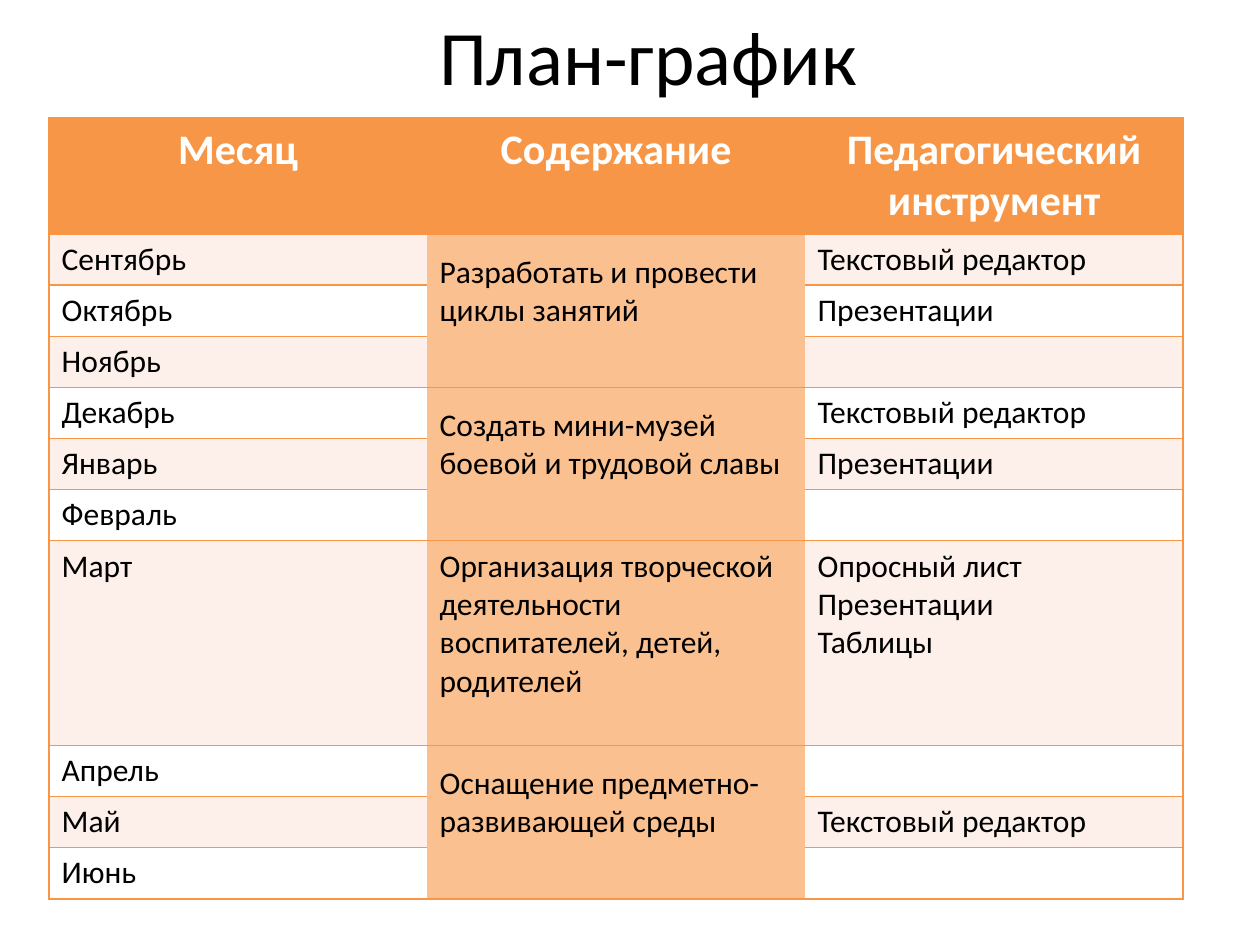
import lxml.etree
import pptx
import pptx.dml.color
import pptx.enum.text
import pptx.oxml.ns
import pptx.util

Cm = pptx.util.Cm
ALIGN = pptx.enum.text.PP_ALIGN
ANCHOR = pptx.enum.text.MSO_ANCHOR
ORANGE, PEACH, PALE, WHITE, BLACK = "F79646", "FAC090", "FDEFE9", "FFFFFF", "000000"
NO_STYLE = "{2D5ABB26-0587-4C30-8999-92F81FD0307C}"
HEADER = {"name": "Calibri", "size": pptx.util.Pt(24), "bold": True}
BODY = {"name": "Calibri", "size": pptx.util.Pt(18), "bold": False}
TITLE = {"name": "Calibri", "size": pptx.util.Pt(44)}
HEADINGS = ("Месяц", "Содержание", "Педагогический инструмент")
PLAN = [
    ("Разработать и провести циклы занятий",
     [("Сентябрь", "Текстовый редактор"), ("Октябрь", "Презентации"), ("Ноябрь", "")]),
    ("Создать мини-музей боевой и трудовой славы",
     [("Декабрь", "Текстовый редактор"), ("Январь", "Презентации"), ("Февраль", "")]),
    ("Организация творческой деятельности воспитателей, детей, родителей",
     [("Март", "Опросный лист\nПрезентации\nТаблицы")]),
    ("Оснащение предметно-развивающей среды",
     [("Апрель", ""), ("Май", "Текстовый редактор"), ("Июнь", "")]),
]


def rgb(value):
    return pptx.dml.color.RGBColor.from_string(value)


def write(tf, text, style, color, align):
    tf.text = text
    for p in tf.paragraphs:
        p.alignment = align
        for r in p.runs:
            for name, value in style.items():
                setattr(r.font, name, value)
            r.font.color.rgb = rgb(color)


def add_border(cell, side):
    qn = pptx.oxml.ns.qn
    ln = lxml.etree.SubElement(cell._tc.get_or_add_tcPr(), qn("a:ln" + side), w="12700")
    fill = lxml.etree.SubElement(ln, qn("a:solidFill"))
    lxml.etree.SubElement(fill, qn("a:srgbClr"), val=ORANGE)


def format_cell(cell, column, text, fill, style=BODY, color=BLACK, align=ALIGN.LEFT):
    for side in ("LTB", "TB", "RTB")[column]:
        add_border(cell, side)
    cell.fill.solid()
    cell.fill.fore_color.rgb = rgb(fill)
    write(cell.text_frame, text, style, color, align)


def add_title(s, text):
    sp = s.shapes.title
    sp.left, sp.top, sp.width, sp.height = Cm(4.75), Cm(0), Cm(16.64), Cm(2.21)
    sp.text_frame.vertical_anchor = ANCHOR.MIDDLE
    write(sp.text_frame, text, TITLE, BLACK, ALIGN.CENTER)


def add_plan(s):
    count = 1 + sum(len(months) for _, months in PLAN)
    frame = s.shapes.add_table(count, 3, Cm(0.99), Cm(2.38), Cm(22.86), Cm(15.7))
    table = frame.table
    table._tbl.tblPr[0].text = NO_STYLE
    table.rows[0].height = Cm(2.34)
    for column, heading in enumerate(HEADINGS):
        format_cell(table.cell(0, column), column, heading, ORANGE, HEADER, WHITE, ALIGN.CENTER)
    row = 1
    for content, months in PLAN:
        cell = table.cell(row, 1)
        if len(months) > 1:
            cell.merge(table.cell(row + len(months) - 1, 1))
        format_cell(cell, 1, content, PEACH)
        cell.vertical_anchor = ANCHOR.MIDDLE
        cell.margin_bottom = Cm(0.9)
        for month, tool in months:
            table.rows[row].height = Cm(1.03 if len(months) > 1 else 4.12)
            band = PALE if row % 2 else WHITE
            format_cell(table.cell(row, 0), 0, month, band)
            format_cell(table.cell(row, 2), 2, tool, band)
            row += 1


def main():
    prs = pptx.Presentation()
    prs.slide_width, prs.slide_height = Cm(25.4), Cm(19.05)
    s = prs.slides.add_slide(prs.slide_layouts[5])
    add_title(s, "План-график")
    add_plan(s)
    prs.save("out.pptx")


if __name__ == "__main__":
    main()
